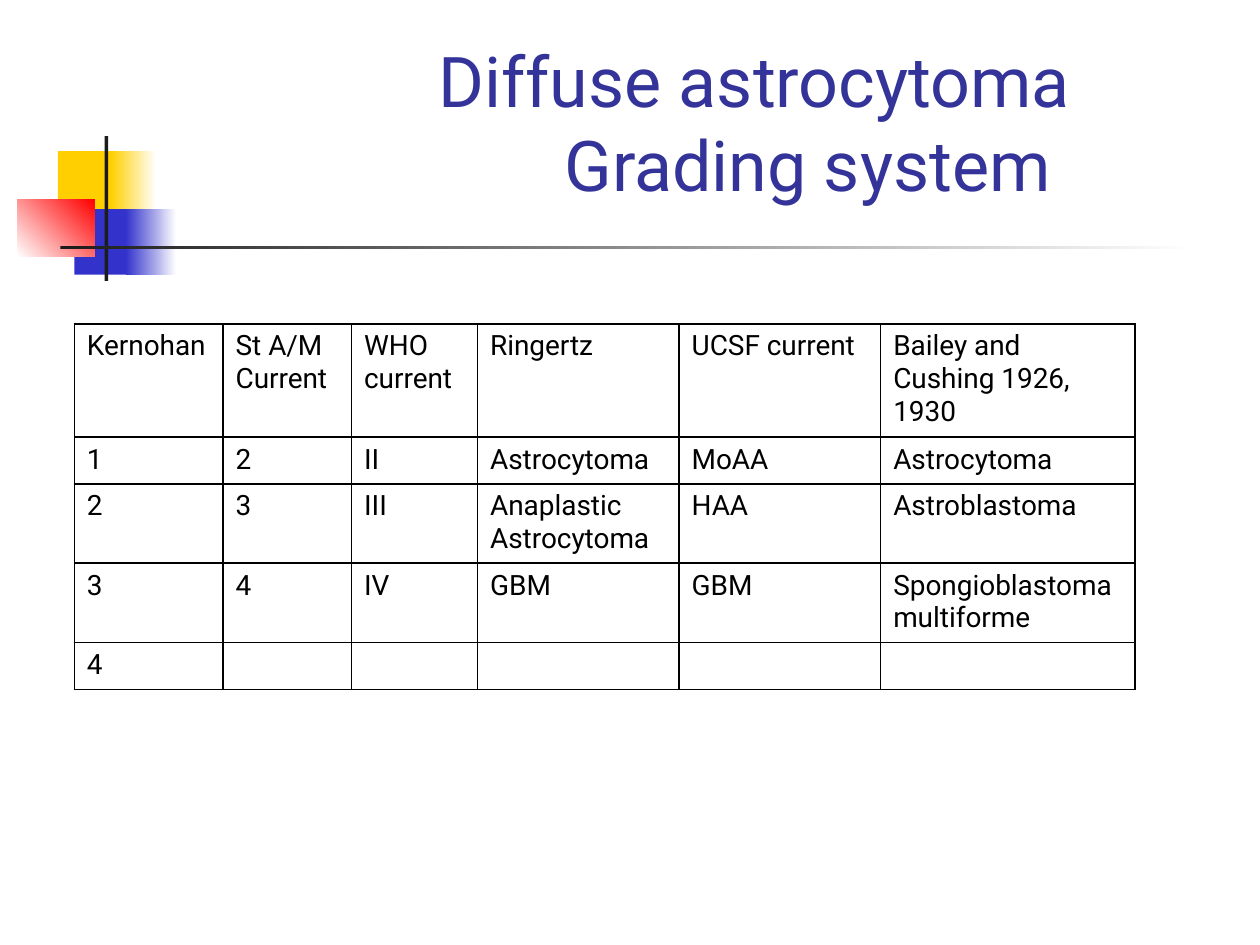
from dataclasses import dataclass

from lxml.etree import SubElement
from pptx import Presentation
from pptx.dml.color import RGBColor
from pptx.enum.shapes import MSO_SHAPE
from pptx.enum.text import MSO_ANCHOR, MSO_AUTO_SIZE, PP_ALIGN
from pptx.oxml.ns import qn
from pptx.util import Inches, Pt


@dataclass(frozen=True)
class Theme:
    """Colours, font and type sizes of the slide."""
    font: str = "Roboto"
    title_size: int = 40
    cell_size: int = 16
    title: str = "333399"
    text: str = "000000"
    paper: str = "FFFFFF"
    yellow: str = "FFCF01"
    blue: str = "3333CC"
    red: str = "FF0000"
    ink: str = "1C1C1C"


THEME = Theme()

DECORATION = [
    ((0.46, 1.2, 0.48, 0.52), [THEME.yellow], 0),
    ((0.88, 1.2, 0.36, 0.52), [THEME.yellow, THEME.paper], 0),
    ((0.59, 1.66, 0.46, 0.52), [THEME.blue], 0),
    ((1, 1.66, 0.4, 0.52), [THEME.blue, THEME.paper], 0),
    ((0.14, 1.58, 0.61, 0.46), [THEME.paper, THEME.red], 45),
    ((0.83, 1.08, 0.03, 1.15), [THEME.ink], 0),
    ((0.48, 1.95, 9, 0.03), [THEME.ink, THEME.paper], 0),
]

COLUMN_WIDTHS = [1.18, 1.02, 1, 1.6, 1.6, 2.02]
ROW_HEIGHTS = [0.9, 0.37, 0.63, 0.63, 0.37]
GRADES = [
    ["Kernohan", "St A/M Current", "WHO current", "Ringertz",
     "UCSF current", "Bailey and Cushing 1926, 1930"],
    ["1", "2", "II", "Astrocytoma", "MoAA", "Astrocytoma"],
    ["2", "3", "III", "Anaplastic Astrocytoma", "HAA", "Astroblastoma"],
    ["3", "4", "IV", "GBM", "GBM", "Spongioblastoma multiforme"],
    ["4", "", "", "", "", ""],
]


def set_attrs(obj, values):
    """Set each named attribute of an object."""
    for name, value in values.items():
        setattr(obj, name, value)


def format_font(font, size, color):
    """Apply the theme font with a size and colour."""
    set_attrs(font, {"name": THEME.font, "size": Pt(size), "bold": False})
    font.color.rgb = RGBColor.from_string(color)


def add_block(s, box, colors, angle):
    """Add a borderless rectangle with a plain or gradient fill."""
    sp = s.shapes.add_shape(MSO_SHAPE.RECTANGLE, *map(Inches, box))
    sp.shadow.inherit = False
    sp.line.fill.background()
    if len(colors) == 1:
        sp.fill.solid()
        sp.fill.fore_color.rgb = RGBColor.from_string(colors[0])
        return
    sp.fill.gradient()
    sp.fill.gradient_angle = angle
    for stop, color in zip(sp.fill.gradient_stops, colors):
        stop.color.rgb = RGBColor.from_string(color)


def set_title(s, text, box):
    """Fill the title, with its second line stepped in by an inch."""
    sp = s.shapes.title
    set_attrs(sp, dict(zip(("left", "top", "width", "height"), map(Inches, box))))
    tf = sp.text_frame
    set_attrs(tf, {"text": text, "word_wrap": True,
                   "auto_size": MSO_AUTO_SIZE.NONE,
                   "vertical_anchor": MSO_ANCHOR.BOTTOM})
    p = tf.paragraphs[0]
    p.alignment = PP_ALIGN.LEFT
    pPr = p._p.get_or_add_pPr()
    pPr.set("marL", str(Inches(3)))
    pPr.set("indent", str(Inches(-1)))
    for r in p.runs:
        format_font(r.font, THEME.title_size, THEME.title)


def add_borders(cell):
    """Draw a one point line on every side of a cell."""
    tcPr = cell._tc.get_or_add_tcPr()
    for i, side in enumerate(("lnL", "lnR", "lnT", "lnB")):
        ln = SubElement(tcPr, qn(f"a:{side}"), w=str(Pt(1)))
        fill = SubElement(ln, qn("a:solidFill"))
        SubElement(fill, qn("a:srgbClr"), val=THEME.text)
        tcPr.insert(i, ln)


def fill_cell(cell, text):
    """Write one cell, keeping the type size when it is empty."""
    cell.fill.background()
    add_borders(cell)
    p = cell.text_frame.paragraphs[0]
    if text:
        r = p.add_run()
        r.text = text
        format_font(r.font, THEME.cell_size, THEME.text)
    else:
        SubElement(p._p, qn("a:endParaRPr"), sz=str(THEME.cell_size * 100))


def add_grid(s, left, top):
    """Add the table of grading systems."""
    size = (sum(COLUMN_WIDTHS), sum(ROW_HEIGHTS))
    table = s.shapes.add_table(len(GRADES), len(COLUMN_WIDTHS),
                               *map(Inches, (left, top, *size))).table
    set_attrs(table, {"first_row": False, "horz_banding": False})
    for column, width in zip(table.columns, COLUMN_WIDTHS):
        column.width = Inches(width)
    for row, height, texts in zip(table.rows, ROW_HEIGHTS, GRADES):
        row.height = Inches(height)
        for cell, text in zip(row.cells, texts):
            fill_cell(cell, text)


def main():
    """Build and save the slide."""
    prs = Presentation()
    set_attrs(prs, {"slide_width": Inches(10), "slide_height": Inches(7.5)})
    s = prs.slides.add_slide(prs.slide_layouts[5])
    for box, colors, angle in DECORATION:
        add_block(s, box, colors, angle)
    set_title(s, "Diffuse astrocytoma\vGrading system", (1.38, 0.21, 8.4, 1.47))
    add_grid(s, 0.59, 2.57)
    prs.save("out.pptx")


if __name__ == "__main__":
    main()
